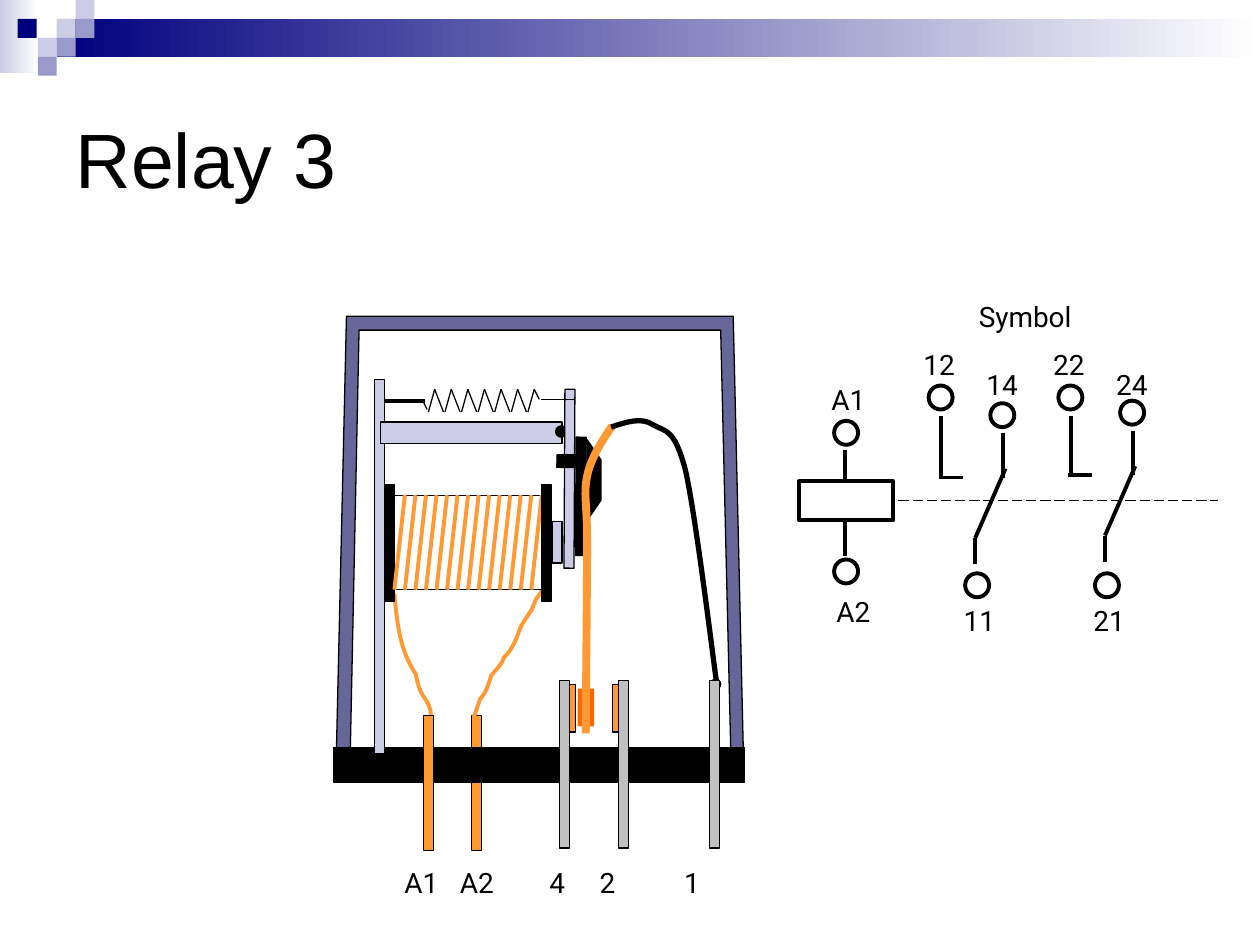
from lxml import etree
from pptx import Presentation
from pptx.dml.color import RGBColor
from pptx.enum.dml import MSO_LINE_DASH_STYLE as Dash
from pptx.enum.shapes import MSO_CONNECTOR as Connector, MSO_SHAPE as Shape
from pptx.enum.text import MSO_ANCHOR as Anchor, MSO_AUTO_SIZE as AutoSize, PP_ALIGN as Align
from pptx.oxml.ns import qn
from pptx.util import Inches, Pt

COLORS = {
    "black": "000000", "white": "FFFFFF", "navy": "00007D", "violet": "9999CC",
    "lavender": "CCCCE6", "case": "666699", "copper": "FF9933",
    "contact": "FF6600", "steel": "C0C0C0",
}


def rgb(name):
    return RGBColor.from_string(COLORS[name])


class SlideBuilder:
    body_font, title_font = "Roboto", "Arial"
    thin, thick = 0.75, 2.25

    def __init__(self, slide):
        self.slide = slide
        self.shapes = slide.shapes

    def paint(self, shape, fill, line, width):
        shape.shadow.inherit = False
        if fill:
            shape.fill.solid()
            shape.fill.fore_color.rgb = rgb(fill)
        else:
            shape.fill.background()
        if line:
            shape.line.color.rgb = rgb(line)
            shape.line.width = Pt(width)
        else:
            shape.line.fill.background()
        return shape

    def box(self, left, top, width, height, fill=None, line="black", weight=thin,
            kind=Shape.RECTANGLE, rotation=0):
        shape = self.shapes.add_shape(kind, Inches(left), Inches(top),
                                      Inches(width), Inches(height))
        shape.rotation = rotation
        return self.paint(shape, fill, line, weight)

    def circle(self, left, top, size=0.19, fill=None, weight=thick):
        return self.box(left, top, size, size, fill, weight=weight, kind=Shape.OVAL)

    def gradient(self, left, top, width, height, start):
        shape = self.box(left, top, width, height, line=None)
        shape.fill.gradient()
        shape.fill.gradient_angle = 0
        for stop, name in zip(shape.fill.gradient_stops, (start, "white")):
            stop.color.rgb = rgb(name)

    def freeform(self, points, close):
        start, *rest = [(Inches(x), Inches(y)) for x, y in points]
        builder = self.shapes.build_freeform(*start)
        builder.add_line_segments(rest, close=close)
        return builder.convert_to_shape()

    def polygon(self, points, fill):
        self.paint(self.freeform(points, True), fill, "black", self.thin)

    def curve(self, points, color="black", weight=thick):
        """Draw a start point followed by triples of Bezier points."""
        shape = self.freeform(points, False)
        segments = list(shape._element.iter(qn("a:lnTo")))
        for index in range(0, len(segments), 3):
            bezier = etree.SubElement(segments[index].getparent(), qn("a:cubicBezTo"))
            for segment in segments[index:index + 3]:
                bezier.append(segment[0])
                segment.getparent().remove(segment)
        self.paint(shape, None, color, weight)

    def line(self, x1, y1, x2, y2, color="black", weight=thick, dash=None):
        connector = self.shapes.add_connector(
            Connector.STRAIGHT, Inches(x1), Inches(y1), Inches(x2), Inches(y2))
        connector.line.color.rgb = rgb(color)
        connector.line.width = Pt(weight)
        if dash:
            connector.line.dash_style = dash
        etree.SubElement(connector._element.spPr, qn("a:effectLst"))

    def format(self, paragraph, font, size):
        for run in paragraph.runs:
            run.font.name = font
            run.font.size = Pt(size)
            run.font.color.rgb = rgb("black")

    def title(self, text):
        shape = self.shapes.title
        shape.left, shape.top = Inches(0.5), Inches(0.5)
        shape.width, shape.height = Inches(9), Inches(1.5)
        frame = shape.text_frame
        frame.text = text
        frame.vertical_anchor = Anchor.MIDDLE
        frame.paragraphs[0].alignment = Align.LEFT
        self.format(frame.paragraphs[0], self.title_font, 44)

    def label(self, text, left, top, width=0.51, tabs=(), inset=0.1):
        shape = self.shapes.add_textbox(Inches(left), Inches(top), Inches(width), Inches(0.37))
        frame = shape.text_frame
        frame.word_wrap = True
        frame.auto_size = AutoSize.SHAPE_TO_FIT_TEXT
        frame.margin_left = Inches(inset)
        frame.text = text
        paragraph = frame.paragraphs[0]
        if tabs:
            tab_list = etree.SubElement(paragraph._p.get_or_add_pPr(), qn("a:tabLst"))
            for position in tabs:
                etree.SubElement(tab_list, qn("a:tab"), pos=str(Inches(position)), algn="l")
        self.format(paragraph, self.body_font, 16)


def draw_banner(draw):
    draw.gradient(0, 0, 0.31, 0.58, "lavender")
    draw.gradient(0.45, 0.15, 9.55, 0.3, "navy")
    for left, top, fill in ((0.45, 0.15, "lavender"), (0.6, 0, "lavender"),
                            (0.6, 0.15, "violet"), (0.3, 0.3, "lavender"),
                            (0.14, 0.15, "navy"), (0.45, 0.3, "violet"),
                            (0.3, 0.45, "violet")):
        draw.box(left, top, 0.15, 0.15, fill, line=None)


def draw_relay(draw):
    # Case, base and fixed contact 4
    draw.polygon([(2.67, 5.97), (2.75, 2.51), (5.82, 2.51), (5.9, 5.97)], "case")
    draw.polygon([(2.78, 5.97), (2.85, 2.62), (5.72, 2.62), (5.8, 5.97)], "white")
    draw.box(3.74, 5.68, 0.08, 1.07, "copper")
    draw.box(2.65, 5.93, 3.26, 0.28, "black")
    draw.box(4.49, 5.43, 0.08, 0.38, "copper")
    draw.box(4.44, 5.4, 0.08, 1.33, "steel")

    # Frame, coil lead A1 and yoke
    draw.line(3.05, 3.18, 3.37, 3.18)
    draw.box(2.97, 3.01, 0.08, 2.97, "lavender")
    draw.curve([(3.13, 4.71), (3.15, 4.93), (3.17, 5.16), (3.3, 5.35),
                (3.31, 5.41), (3.33, 5.49), (3.37, 5.54),
                (3.4, 5.58), (3.42, 5.63), (3.42, 5.68)], "copper")
    draw.box(3.36, 5.68, 0.08, 1.07, "copper")
    draw.box(3.02, 3.35, 1.44, 0.17, "lavender")
    draw.circle(4.41, 3.38, 0.09, "black", 0.75)

    # Armature with moving contact
    tilt = 0.3
    draw.box(4.48, 3.09, 0.08, 1.42, "lavender", rotation=tilt)
    draw.box(4.42, 3.61, 0.21, 0.1, "black", rotation=tilt)
    draw.box(4.57, 3.47, 0.08, 0.94, "black", rotation=tilt)
    draw.polygon([(4.66, 4.13), (4.77, 3.97), (4.77, 3.65), (4.66, 3.49)], "black")
    draw.box(4.59, 5.47, 0.12, 0.29, "contact", "contact", rotation=tilt)
    draw.curve([(4.65, 5.82), (4.65, 5.57), (4.66, 4.65), (4.66, 4.31),
                (4.66, 3.97), (4.63, 3.93), (4.66, 3.78),
                (4.69, 3.62), (4.82, 3.44), (4.86, 3.38)], "copper", 4.5)

    # Coil with windings and lead A2
    turns, left, width = 14, 3.13, 1.17
    pitch = width / turns
    draw.box(left, 3.93, width, 0.75)
    draw.box(3.05, 3.85, 0.08, 0.92, "black")
    for turn in range(turns):
        x = left + turn * pitch
        draw.line(x, 4.68, x + pitch, 3.93, "copper")
    draw.curve([(4.3, 4.69), (4.28, 4.73), (4.25, 4.75), (4.24, 4.79),
                (4.23, 4.81), (4.23, 4.82), (4.22, 4.84),
                (4.2, 4.87), (4.18, 4.9), (4.16, 4.93),
                (4.15, 4.95), (4.13, 4.98), (4.13, 4.98),
                (4.1, 5.07), (4.07, 5.15), (4, 5.22),
                (3.98, 5.28), (3.94, 5.31), (3.9, 5.36),
                (3.89, 5.39), (3.88, 5.42), (3.87, 5.45),
                (3.86, 5.49), (3.81, 5.55), (3.81, 5.55),
                (3.8, 5.58), (3.79, 5.61), (3.78, 5.64),
                (3.76, 5.7), (3.76, 5.7), (3.76, 5.67)], "copper")
    draw.box(4.3, 3.85, 0.08, 0.92, "black")
    draw.box(4.38, 4.14, 0.08, 0.33, "lavender")

    # Return spring
    coils, low, high = 7, 3.27, 3.09
    step = (4.19 - 3.4) / (coils - 1)
    draw.line(3.39, 3.25, 3.36, 3.19, weight=0.75)
    for coil in range(coils):
        x = 3.4 + coil * step
        draw.line(x, low, x + 0.05, high, weight=0.75)
        if coil < coils - 1:
            draw.line(x + 0.12, low, x + 0.05, high, weight=0.75)
    draw.line(4.24, high, 4.28, 3.17, weight=0.75)
    draw.line(4.56, 3.17, 4.29, 3.17, weight=0.75)

    # Flexible lead, contact 2 and terminal 1
    draw.curve([(4.85, 3.39), (4.97, 3.35), (5.09, 3.31), (5.18, 3.37),
                (5.28, 3.43), (5.35, 3.39), (5.44, 3.73),
                (5.52, 4.08), (5.65, 5.15), (5.69, 5.44)], weight=3)
    draw.box(4.86, 5.43, 0.08, 0.38, "copper")
    draw.box(4.91, 5.4, 0.08, 1.33, "steel")
    draw.circle(5.64, 5.39, 0.08, "black", 0.75)
    draw.box(5.63, 5.4, 0.08, 1.33, "steel")
    draw.label("A1\tA2\t4\t2\t1", 2.95, 6.82, 4.25, tabs=(0.44, 1.15, 1.55, 2.22), inset=0.26)


def draw_symbol(draw):
    draw.label("Symbol", 7.67, 2.33, 1.6)

    # Coil
    draw.label("A1", 6.5, 2.99, 0.54)
    draw.circle(6.62, 3.34)
    draw.circle(6.62, 4.44)
    draw.line(6.71, 3.57, 6.71, 4.41)
    draw.box(6.34, 3.82, 0.75, 0.31, "white", weight=2.25)
    draw.label("A2", 6.54, 4.67, 0.49)
    draw.line(7.13, 3.97, 9.67, 3.97, weight=0.75, dash=Dash.LONG_DASH)

    # Two changeover contacts
    for pole, (shift, rise) in enumerate(((0, 0), (1.03, 0.02)), start=1):
        for digit, x, y, width in ((2, 7.23, 2.71, 0.51), (4, 7.73, 2.87, 0.51),
                                   (1, 7.55, 4.74, 0.47)):
            draw.label(f"{pole}{digit}", x + shift, y, width)
        for x, y in ((7.66, 4.55), (7.37, 3.06), (7.86, 3.2 - rise)):
            draw.circle(x + shift, y)
        for x1, y1, x2, y2 in ((7.47, 3.3, 7.47, 3.79 - rise),
                               (7.45, 3.79 - rise, 7.64, 3.79 - rise),
                               (7.74, 4.27 - rise, 7.98, 3.72 - rise),
                               (7.74, 4.27 - rise, 7.74, 4.48 - rise),
                               (7.96, 3.44 - rise, 7.96, 3.79 - rise)):
            draw.line(x1 + shift, y1, x2 + shift, y2)


def main():
    presentation = Presentation()
    presentation.slide_width, presentation.slide_height = Inches(10), Inches(7.5)
    draw = SlideBuilder(presentation.slides.add_slide(presentation.slide_layouts[5]))
    draw_banner(draw)
    draw.title("Relay 3")
    draw_relay(draw)
    draw_symbol(draw)
    presentation.save("out.pptx")


if __name__ == "__main__":
    main()
